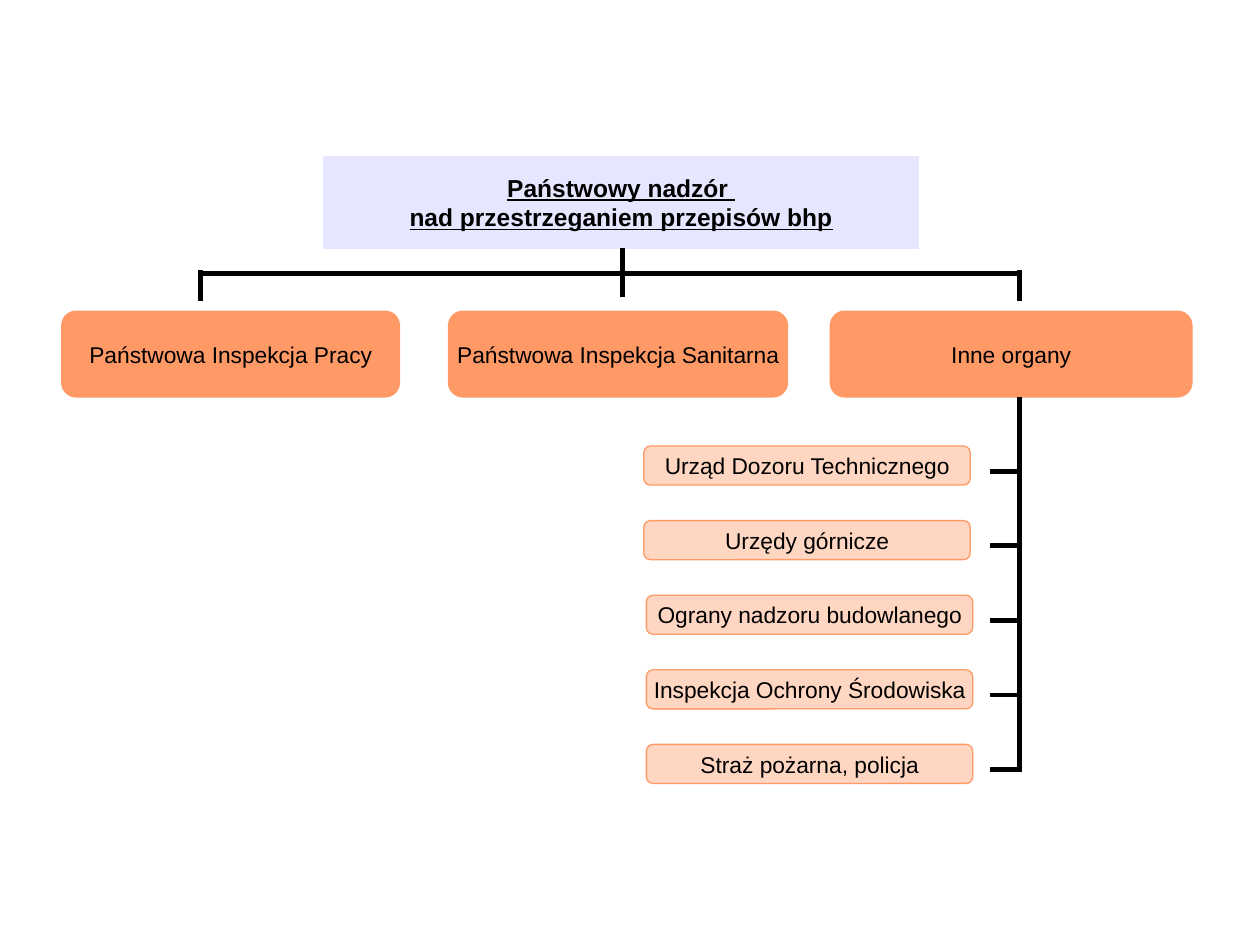
from lxml.etree import SubElement
from pptx import Presentation
from pptx.dml.color import RGBColor as Rgb
from pptx.enum.shapes import MSO_CONNECTOR as Link, MSO_SHAPE as Shape
from pptx.enum.text import MSO_ANCHOR as Anchor, MSO_AUTO_SIZE as AutoSize, PP_ALIGN as Align
from pptx.oxml.ns import qn
from pptx.util import Inches, Pt

COLORS = {"head": "E6E6FF", "body": "FF9966", "ink": "000000"}
COLUMNS, ROWS = 100, 75


class OrgChart:
    """Draws an organisation chart on a grid of 100 columns by 75 rows."""

    def __init__(self, deck):
        self.column = deck.slide_width / COLUMNS
        self.row = deck.slide_height / ROWS
        self.page = deck.slides.add_slide(deck.slide_layouts[5])

    def place(self, *cells):
        units = (self.column, self.row) * 2
        return [round(cell * unit) for cell, unit in zip(cells, units)]

    def style(self, box, lines, color, size, inset, alpha=None, heading=False):
        box.fill.solid()
        box.fill.fore_color.rgb = box.line.color.rgb = Rgb.from_string(COLORS[color])
        box.line.width = Pt(0.75)
        if alpha:
            tint = box.fill._xPr.find(qn("a:solidFill"))[0]
            SubElement(tint, qn("a:alpha"), val=str(alpha * 1000))
        frame = box.text_frame
        frame.text = "\n".join(lines)
        frame.word_wrap = False
        frame.auto_size = AutoSize.NONE
        frame.vertical_anchor = Anchor.MIDDLE
        frame.margin_left = frame.margin_right = Inches(inset)
        frame.margin_top = frame.margin_bottom = Inches(inset - 0.02)
        for para in frame.paragraphs:
            para.alignment = Align.CENTER
            font = para.font
            font.name, font.size = "Arial", Pt(size)
            font.bold = font.underline = heading
            font.color.rgb = Rgb.from_string(COLORS["ink"])

    def title(self, lines, *cells):
        box = self.page.shapes.title
        box.left, box.top, box.width, box.height = self.place(*cells)
        outline = SubElement(box._element.spPr, qn("a:prstGeom"), prst="roundRect")
        SubElement(outline, qn("a:avLst"))
        self.style(box, lines, "head", 14, 0.04, heading=True)

    def box(self, text, *cells, inset=0.04, alpha=None):
        box = self.page.shapes.add_shape(Shape.ROUNDED_RECTANGLE, *self.place(*cells))
        box.shadow.inherit = False
        self.style(box, [text], "body", 13, inset, alpha)

    def line(self, *cells):
        line = self.page.shapes.add_connector(Link.STRAIGHT, *self.place(*cells))
        line.line.color.rgb = Rgb.from_string(COLORS["ink"])
        line.line.width = Pt(2.83)
        SubElement(line._element.spPr, qn("a:effectLst"))


def main():
    deck = Presentation()
    deck.slide_width, deck.slide_height = Inches(10), Inches(7.5)
    chart = OrgChart(deck)
    chart.title(["Państwowy nadzór ", "nad przestrzeganiem przepisów bhp"], 25.7, 12.4, 47.2, 7.3)

    branches = [
        ("Państwowa Inspekcja Pracy", 4.9, 26.8),
        ("Państwowa Inspekcja Sanitarna", 35.6, 26.9),
        ("Inne organy", 65.9, 28.7),
    ]
    for name, left, width in branches:
        chart.box(name, left, 24.7, width, 6.8)

    first, last, bar = 15.9, 80.9, 21.7
    chart.line(49.4, 19.7, 49.4, 23.6)
    chart.line(first, bar, last, bar)
    for drop in (first, last):
        chart.line(drop, 23.9, drop, 21.4)
    chart.line(last, 31.5, last, 61)

    bodies = [
        ("Urząd Dozoru Technicznego", 51.1),
        ("Urzędy górnicze", 51.1),
        ("Ograny nadzoru budowlanego", 51.3),
        ("Inspekcja Ochrony Środowiska", 51.3),
        ("Straż pożarna, policja", 51.3),
    ]
    for index, (name, left) in enumerate(bodies):
        top = 35.4 + 5.92 * index
        chart.box(name, left, top, 25.9, 3.1, inset=0.05, alpha=40)
        chart.line(81.1, top + 2, 78.6, top + 2)

    deck.save("out.pptx")


if __name__ == "__main__":
    main()
